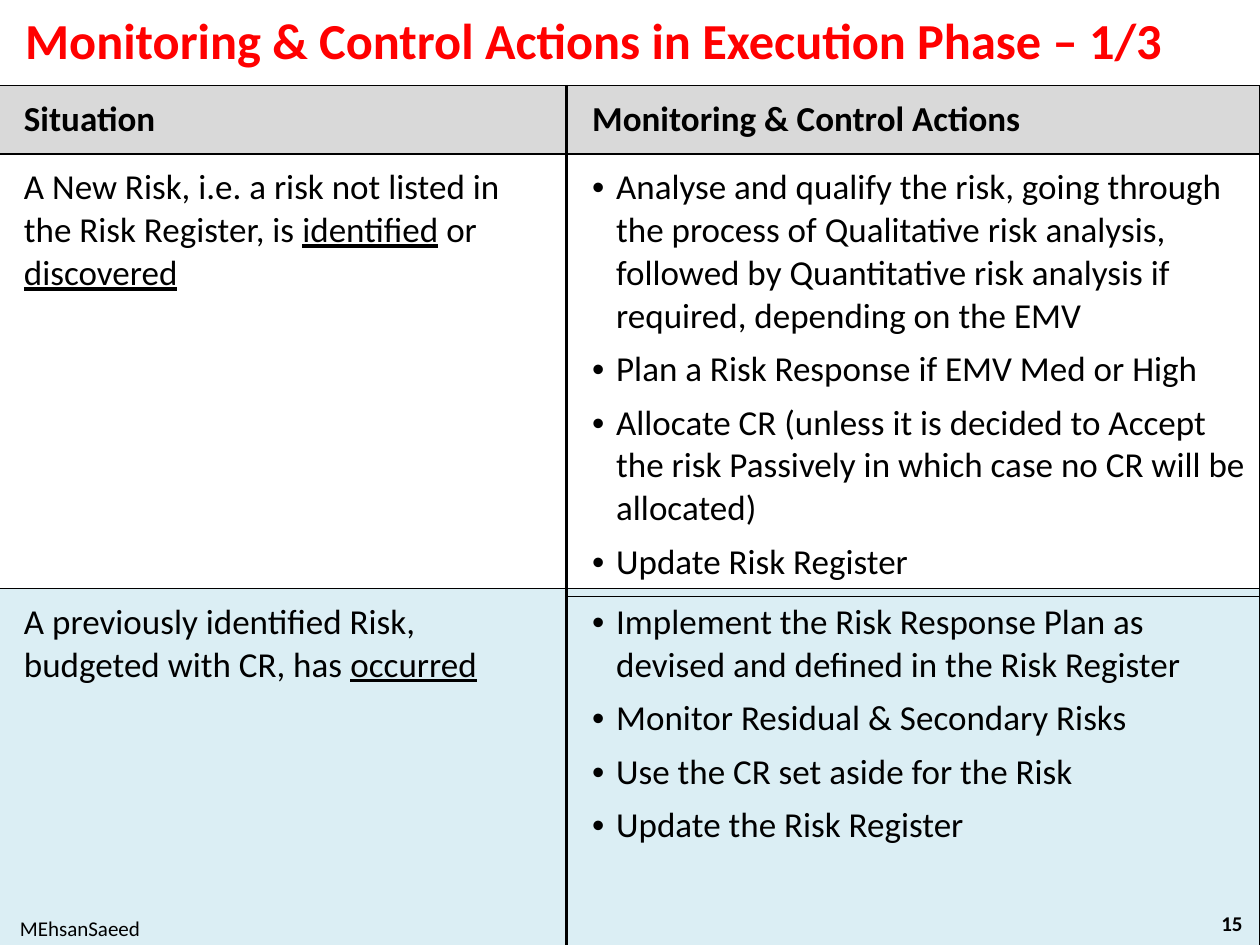
from lxml import etree
from pptx import Presentation
from pptx.dml.color import RGBColor
from pptx.enum.text import MSO_ANCHOR, MSO_AUTO_SIZE, PP_ALIGN
from pptx.oxml.ns import qn
from pptx.util import Inches, Pt

BOTTOM, MIDDLE, TOP = MSO_ANCHOR.BOTTOM, MSO_ANCHOR.MIDDLE, MSO_ANCHOR.TOP
LEFT, CENTER, RIGHT = PP_ALIGN.LEFT, PP_ALIGN.CENTER, PP_ALIGN.RIGHT
BLACK = RGBColor(0x00, 0x00, 0x00)
RED = RGBColor(0xFF, 0x00, 0x00)
GREY = RGBColor(0xD9, 0xD9, 0xD9)
PALE_BLUE = RGBColor(0xDB, 0xEE, 0xF4)

SITUATION_X, ACTIONS_X = -0.01, 4.5
SITUATION_W, ACTIONS_W = 4.5, 5.5
UPPER_Y, LOWER_Y = 0.68, 4.67
HEADER_H, LOWER_H = 0.53, 2.9


def write_runs(paragraph, text, size, color=BLACK, bold=False):
    """Write text into the paragraph, underlining what stands between underscores."""
    for i, part in enumerate(text.split("_")):
        if part:
            run = paragraph.add_run()
            run.text = part
            run.font.name = "Calibri"
            run.font.size = Pt(size)
            run.font.bold = bold
            run.font.underline = i % 2 == 1
            run.font.color.rgb = color


def fill_cell(cell, lines, fill, header, bulleted):
    cell.margin_left = Inches(0.2)
    cell.margin_top = cell.margin_right = cell.margin_bottom = Inches(0.1)
    cell.vertical_anchor = BOTTOM if header else TOP
    properties = cell._tc.get_or_add_tcPr()
    for side in ("a:lnL", "a:lnR", "a:lnT", "a:lnB"):
        border = etree.SubElement(properties, qn(side), w=str(Pt(1)))
        solid = etree.SubElement(border, qn("a:solidFill"))
        etree.SubElement(solid, qn("a:srgbClr"), val=str(BLACK))
    if fill is None:
        cell.fill.background()
    else:
        cell.fill.solid()
        cell.fill.fore_color.rgb = fill

    frame = cell.text_frame
    for i, line in enumerate(lines):
        paragraph = frame.add_paragraph() if i else frame.paragraphs[0]
        write_runs(paragraph, line, 20, bold=header)
        if bulleted:
            paragraph.space_before = Pt(6)
            bullet_properties = paragraph._p.get_or_add_pPr()
            bullet_properties.set("marL", str(Inches(0.19)))
            bullet_properties.set("indent", str(-Inches(0.19)))
            etree.SubElement(bullet_properties, qn("a:buFont"), typeface="Arial")
            etree.SubElement(bullet_properties, qn("a:buChar"), char="•")


prs = Presentation()
prs.slide_width, prs.slide_height = Inches(10), Inches(7.5)
slide = prs.slides.add_slide(prs.slide_layouts[5])

# Title
title = slide.shapes.title
title.left, title.top, title.width, title.height = 0, 0, Inches(10), Inches(0.62)
title_frame = title.text_frame
title_frame.auto_size = MSO_AUTO_SIZE.NONE
title_frame.vertical_anchor = MIDDLE
title_frame.margin_left = Inches(0.2)
title_frame.margin_top = title_frame.margin_right = title_frame.margin_bottom = 0
title_frame.paragraphs[0].alignment = LEFT
write_runs(title_frame.paragraphs[0],
           "Monitoring & Control Actions in Execution Phase – 1/3", 28.8, RED, True)

# Situations on the left, actions on the right
new_risk = ["A New Risk, i.e. a risk not listed in the Risk Register, "
            "is _identified_ or _discovered_"]
new_risk_actions = [
    "Analyse and qualify the risk, going through the process of Qualitative risk "
    "analysis, followed by Quantitative risk analysis if required, depending on the EMV",
    "Plan a Risk Response if EMV Med or High",
    "Allocate CR (unless it is decided to Accept the risk Passively in which case "
    "no CR will be allocated)",
    "Update Risk Register",
]
occurred_risk = ["A previously identified Risk, budgeted with CR, has _occurred_ "]
occurred_risk_actions = [
    "Implement the Risk Response Plan as devised and defined in the Risk Register",
    "Monitor Residual & Secondary Risks",
    "Use the CR set aside for the Risk",
    "Update the Risk Register",
]

# left, top, width, header, body lines, body height, body fill
tables = [
    (SITUATION_X, LOWER_Y, SITUATION_W, None, occurred_risk, LOWER_H, PALE_BLUE),
    (ACTIONS_X, LOWER_Y, ACTIONS_W, None, occurred_risk_actions, LOWER_H, PALE_BLUE),
    (SITUATION_X, UPPER_Y, SITUATION_W, "Situation", new_risk, 3.45, None),
    (ACTIONS_X, UPPER_Y, ACTIONS_W, "Monitoring & Control Actions",
     new_risk_actions, 1.4, None),
]
for left, top, width, header, body, body_h, body_fill in tables:
    rows = [([header], HEADER_H, GREY, True)] if header else []
    rows.append((body, body_h, body_fill, False))
    table = slide.shapes.add_table(
        len(rows), 1, Inches(left), Inches(top), Inches(width),
        Inches(sum(row[1] for row in rows))).table
    table.first_row = table.horz_banding = False
    for i, (lines, height, fill, is_header) in enumerate(rows):
        table.rows[i].height = Inches(height)
        fill_cell(table.cell(i, 0), lines, fill, is_header, len(lines) > 1)

# Footer: slide number and author
footers = [
    ("15", 7.63, 7.13, 2.33, RIGHT, True),
    ("MEhsanSaeed", 0.01, 7.17, 1.25, CENTER, False),
]
for text, left, top, width, alignment, bold in footers:
    footer = slide.shapes.add_textbox(Inches(left), Inches(top), Inches(width), Inches(0.4))
    footer.text_frame.word_wrap = True
    footer.text_frame.vertical_anchor = MIDDLE
    footer.text_frame.paragraphs[0].alignment = alignment
    write_runs(footer.text_frame.paragraphs[0], text, 12, bold=bold)

prs.save("out.pptx")
